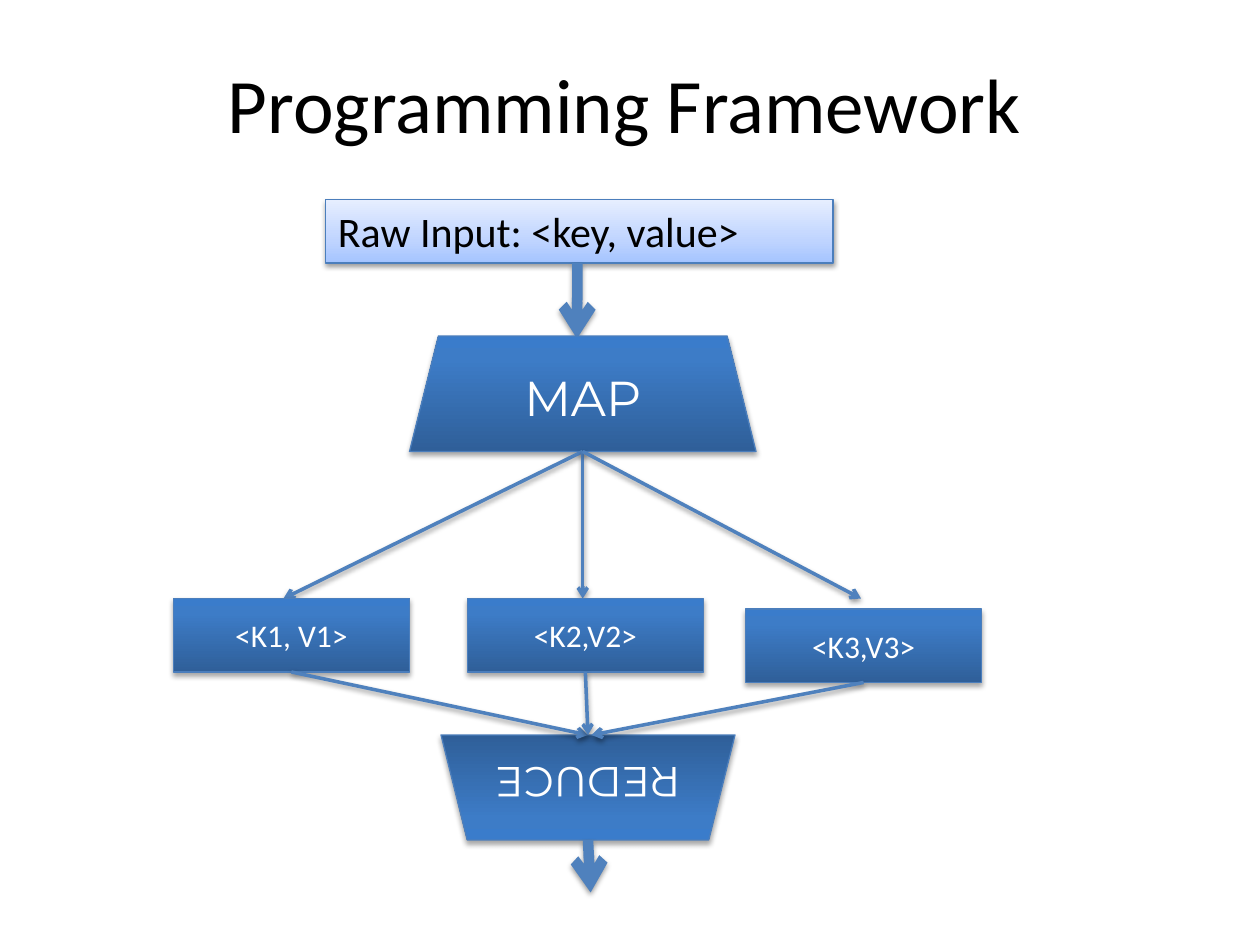
from lxml.etree import SubElement
from pptx import Presentation
from pptx.dml.color import RGBColor
from pptx.enum.shapes import MSO_CONNECTOR, MSO_SHAPE
from pptx.enum.text import MSO_ANCHOR, PP_ALIGN
from pptx.oxml.ns import qn
from pptx.util import Pt


def rgb(value):
    return RGBColor.from_string(value)


def add(parent, tag, **attrs):
    return SubElement(parent, qn(tag), {k: str(v) for k, v in attrs.items()})


class Deck:
    blue = [(0, "2F5F99"), (80, "3D7CC7"), (100, "3A7CCB")]
    pale = [(0, "A4C4FF"), (35, "BFD4FF"), (100, "E6EEFF")]
    edge = "4B7EBC"
    arrow_color = "4F81BD"

    def __init__(self, prs):
        self.s = prs.slides.add_slide(prs.slide_layouts[6])

    def shadow(self, shape, alpha=38, dist=1.6):
        effects = add(shape._element.spPr, "a:effectLst")
        outer = add(effects, "a:outerShdw", blurRad=Pt(3.1), dist=Pt(dist),
                    dir=5400000, rotWithShape=0)
        color = add(outer, "a:srgbClr", val="000000")
        add(color, "a:alpha", val=alpha * 1000)

    def gradient(self, shape, stops):
        shape.fill.gradient()
        shape.fill.gradient_angle = 90
        stop_list = shape._element.spPr.find(qn("a:gradFill")).find(qn("a:gsLst"))
        for old in list(stop_list):
            stop_list.remove(old)
        for pos, color in stops:
            add(add(stop_list, "a:gs", pos=pos * 1000), "a:srgbClr", val=color)

    def label(self, sp, text, size, color, font="Calibri",
              align=PP_ALIGN.CENTER, anchor=MSO_ANCHOR.MIDDLE, wrap=True):
        tf = sp.text_frame
        p = tf.paragraphs[0]
        r = p.add_run()
        r.text = text
        formats = [
            (tf, {"word_wrap": wrap, "vertical_anchor": anchor}),
            (p, {"alignment": align}),
            (r.font, {"size": Pt(size), "name": font}),
        ]
        for target, values in formats:
            for name, value in values.items():
                setattr(target, name, value)
        r.font.color.rgb = rgb(color)

    def title(self, text, box):
        sp = self.s.shapes.add_textbox(*map(Pt, box))
        self.label(sp, text, 44, "000000")

    def block(self, kind, box, text, size, stops=blue, color="FFFFFF",
              flip=False, shade=(35, 1.8), **text_format):
        sp = self.s.shapes.add_shape(kind, *map(Pt, box))
        self.gradient(sp, stops)
        sp.line.color.rgb = rgb(self.edge)
        sp.line.width = Pt(0.75)
        self.shadow(sp, *shade)
        if flip:
            sp._element.spPr.find(qn("a:xfrm")).set("flipV", "1")
        self.label(sp, text, size, color, **text_format)

    def arrow(self, start, end, width=2):
        c = self.s.shapes.add_connector(MSO_CONNECTOR.STRAIGHT, *map(Pt, start + end))
        c.line.color.rgb = rgb(self.arrow_color)
        c.line.width = Pt(width)
        add(c._element.spPr.find(qn("a:ln")), "a:tailEnd", type="arrow")
        self.shadow(c)


def main():
    prs = Presentation()
    prs.slide_width, prs.slide_height = Pt(720), Pt(540)
    deck = Deck(prs)

    deck.title("Programming Framework", (36, 21.6, 642, 74))
    deck.block(MSO_SHAPE.RECTANGLE, (186, 114, 290, 36.3), "Raw Input: <key, value>", 24,
               stops=deck.pale, color="000000", shade=(38, 1.6),
               align=PP_ALIGN.LEFT, anchor=MSO_ANCHOR.TOP, wrap=False)
    deck.arrow((330, 150.3), (329.7, 193.5), 6)
    deck.block(MSO_SHAPE.TRAPEZOID, (234, 192, 198, 66), "MAP", 28, font="Montserrat")

    pair_width, pair_height = 135, 42
    pairs = [("<K1, V1>", 99, 342, 162), ("<K2,V2>", 267, 342, 333),
             ("<K3,V3>", 426, 348, 492)]
    for text, left, top, target in pairs:
        deck.arrow((333, 258), (target, 342))
        deck.block(MSO_SHAPE.RECTANGLE, (left, top, pair_width, pair_height), text, 18)

    deck.block(MSO_SHAPE.TRAPEZOID, (252, 420, 168, 60), "REDUCE", 24,
               font="Montserrat", flip=True)
    for (text, left, top, target), end in zip(pairs, (336, 336, 338)):
        deck.arrow((left + pair_width / 2, top + pair_height), (end, 420))
    deck.arrow((336, 480), (337.5, 510), 6)

    prs.save("out.pptx")


if __name__ == "__main__":
    main()
